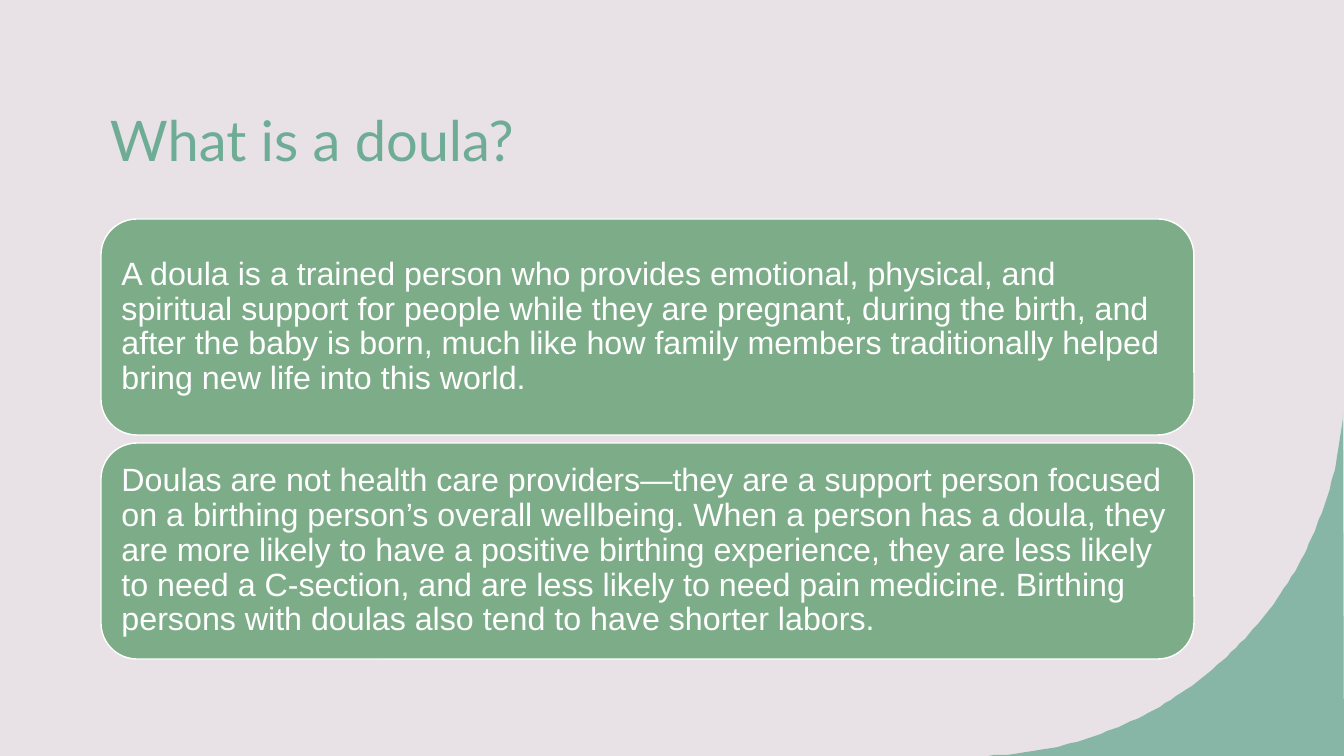
from math import cos, radians, sin

from lxml.etree import SubElement
from pptx import Presentation
from pptx.dml.color import RGBColor
from pptx.enum.shapes import MSO_SHAPE
from pptx.enum.text import MSO_ANCHOR, PP_ALIGN
from pptx.oxml.ns import qn
from pptx.util import Emu, Pt

EMU_PER_PX = 914400 / 100.8
WIDTH, HEIGHT = 1344, 756
TEAL, GREEN, WHITE, BACKGROUND = "6FAC96", "7DAD88", "FFFFFF", "E8E2E7"

STATEMENTS = [
    "A doula is a trained person who provides emotional, physical, and spiritual "
    "support for people while they are pregnant, during the birth, and after the "
    "baby is born, much like how family members traditionally helped bring new "
    "life into this world.",
    "Doulas are not health care providers—they are a support person focused on a "
    "birthing person’s overall wellbeing. When a person has a doula, they are more "
    "likely to have a positive birthing experience, they are less likely to need a "
    "C-section, and are less likely to need pain medicine. Birthing persons with "
    "doulas also tend to have shorter labors.",
]


def px(n):
    """Turn pixels into EMU."""
    return Emu(round(n * EMU_PER_PX))


def paint(fill, color):
    """Give a fill one solid hex colour."""
    fill.solid()
    fill.fore_color.rgb = RGBColor.from_string(color)


def write(sp, text, size, font, color, spacing=1.0):
    """Write one left-aligned, vertically centred paragraph in a shape."""
    tf = sp.text_frame
    tf.word_wrap = True
    tf.vertical_anchor = MSO_ANCHOR.MIDDLE
    tf.margin_left = tf.margin_right = px(10)
    p = tf.paragraphs[0]
    p.alignment = PP_ALIGN.LEFT
    p.line_spacing = spacing
    r = p.add_run()
    r.text = text
    r.font.size = Pt(size)
    r.font.name = font
    r.font.color.rgb = RGBColor.from_string(color)


def add_corner(s, x, y, radius):
    """Draw the translucent corner outside a quarter circle."""
    arc = [(x + radius * cos(radians(a)), y + radius * sin(radians(a)))
           for a in range(4, 91)]
    builder = s.shapes.build_freeform(x + radius, y + radius, scale=EMU_PER_PX)
    builder.add_line_segments(arc, close=True)
    sp = builder.convert_to_shape()
    sp.shadow.inherit = False
    sp.line.fill.background()
    paint(sp.fill, TEAL)
    clr = sp.fill._xPr.find(qn("a:solidFill"))[0]
    SubElement(clr, qn("a:alpha"), val="80000")


def add_title(s, x, y, w, h):
    """Place the slide title."""
    sp = s.shapes.add_textbox(px(x), px(y), px(w), px(h))
    write(sp, "What is a doula?", 40, "Lato", TEAL)


def add_cards(s, x, y, w, h, gap):
    """Stack one rounded card per statement."""
    card_h = (h - gap * (len(STATEMENTS) - 1)) / len(STATEMENTS)
    for i, text in enumerate(STATEMENTS):
        top = y + i * (card_h + gap)
        sp = s.shapes.add_shape(MSO_SHAPE.ROUNDED_RECTANGLE,
                                px(x), px(top), px(w), px(card_h))
        sp.shadow.inherit = False
        paint(sp.fill, GREEN)
        paint(sp.line.fill, WHITE)
        sp.line.width = Pt(1)
        write(sp, text, 23, "Arial", WHITE, 0.9)


def main():
    """Build and save the slide."""
    prs = Presentation()
    prs.slide_width, prs.slide_height = px(WIDTH), px(HEIGHT)
    s = prs.slides.add_slide(prs.slide_layouts[6])
    paint(s.background.fill, BACKGROUND)
    add_corner(s, 975, 387, 369)
    add_title(s, 100, 66, 1093, 146)
    add_cards(s, 101, 219, 1093, 440, 8)
    prs.save("out.pptx")


if __name__ == "__main__":
    main()
